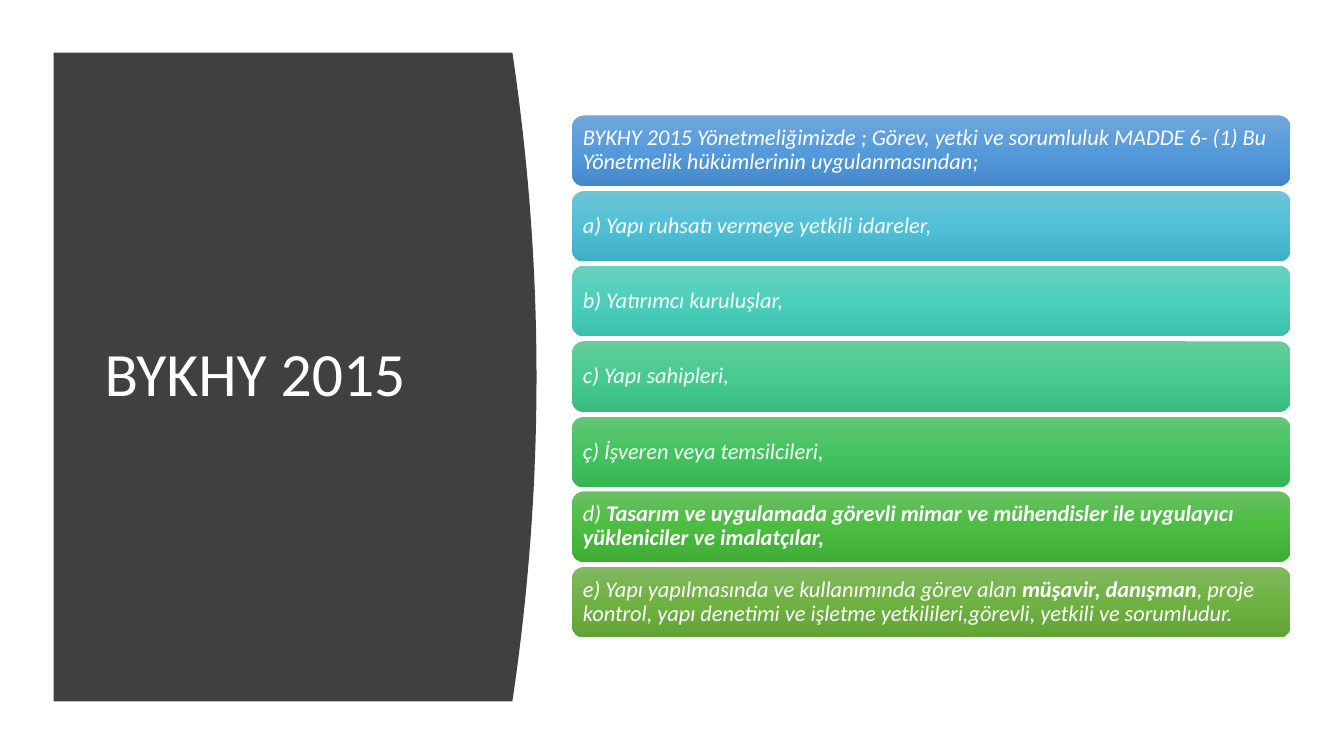
from copy import deepcopy
from dataclasses import dataclass

from pptx import Presentation
from pptx.dml.color import RGBColor
from pptx.enum.shapes import MSO_SHAPE
from pptx.enum.text import MSO_ANCHOR, MSO_AUTO_SIZE, PP_ALIGN
from pptx.oxml.ns import qn
from pptx.util import Pt

PX = 9525  # EMU in one px, 96 px to the inch


@dataclass(frozen=True)
class Theme:
    font: str = "Calibri"
    title_size: int = 44
    bar_size: int = 16
    text: str = "FFFFFF"
    panel: str = "404040"
    line_spacing: float = 0.9
    bar_gradients: tuple = (
        ("71A6DB", "559BDB", "448ACA"),
        ("6EC4D6", "50C0D6", "40AFC5"),
        ("6AD1C0", "4CD0BC", "3CC0AC"),
        ("67CC9A", "47CB8E", "39BB7F"),
        ("64C677", "44C460", "36B552"),
        ("69C062", "4CBD41", "3FAD34"),
        ("81B861", "6FB242", "62A336"),
    )


THEME = Theme()

# Each duty is a list of runs; every second run is bold.
DUTIES = (
    ["BYKHY 2015 Yönetmeliğimizde ; Görev, yetki ve sorumluluk MADDE 6- (1) "
     "Bu Yönetmelik hükümlerinin uygulanmasından;"],
    ["a) Yapı ruhsatı vermeye yetkili idareler,"],
    ["b) Yatırımcı kuruluşlar,"],
    ["c) Yapı sahipleri,"],
    ["ç) İşveren veya temsilcileri,"],
    ["d) ", "Tasarım ve uygulamada görevli mimar ve mühendisler ile uygulayıcı "
            "yükleniciler ve imalatçılar,"],
    ["e) Yapı yapılmasında ve kullanımında görev alan ", "müşavir, danışman",
     ", proje kontrol, yapı denetimi ve işletme yetkilileri,görevli, yetkili "
     "ve sorumludur."],
)


def place(shape, left, top, width, height):
    shape.left, shape.top = left * PX, top * PX
    shape.width, shape.height = width * PX, height * PX


def format_paragraph(paragraph, size):
    paragraph.alignment = PP_ALIGN.LEFT
    paragraph.line_spacing = THEME.line_spacing
    paragraph.font.name = THEME.font
    paragraph.font.size = Pt(size)
    paragraph.font.color.rgb = RGBColor.from_string(THEME.text)


def add_title_panel(slide, left, top, width, height):
    """Dark panel whose right edge bulges as a parabola, with the title on it."""
    bulge, steps = 23, 40
    edge = []
    for step in range(steps + 1):
        offset = 2 * step / steps - 1
        x = left + width - bulge * offset ** 2
        edge.append((round(x * PX), round((top + height * step / steps) * PX)))
    builder = slide.shapes.build_freeform(left * PX, top * PX)
    builder.add_line_segments(edge + [(left * PX, (top + height) * PX)], close=True)
    panel = builder.convert_to_shape()
    panel.shadow.inherit = False
    panel.fill.solid()
    panel.fill.fore_color.rgb = RGBColor.from_string(THEME.panel)
    panel.line.fill.background()

    title = slide.shapes.title
    title._element.addprevious(panel._element)  # keeps the title in front
    place(title, left + 39, top + 57, width - 101, height - 115)
    frame = title.text_frame
    frame.text = "BYKHY 2015"
    frame.word_wrap = True
    frame.auto_size = MSO_AUTO_SIZE.NONE
    frame.vertical_anchor = MSO_ANCHOR.MIDDLE
    format_paragraph(frame.paragraphs[0], THEME.title_size)


def fill_gradient(shape, colors):
    """Three evenly spaced colours from top to bottom."""
    shape.fill.gradient()
    shape.fill.gradient_angle = 270
    stop_list = shape._element.spPr.find(".//" + qn("a:gsLst"))
    stop_list.insert(1, deepcopy(stop_list[0]))
    for index, (stop, color) in enumerate(zip(shape.fill.gradient_stops, colors)):
        stop.position = index / 2
        stop.color.rgb = RGBColor.from_string(color)


def add_duty_bar(slide, runs, colors, left, top, width, height):
    bar = slide.shapes.add_shape(MSO_SHAPE.ROUNDED_RECTANGLE, 0, 0, 0, 0)
    place(bar, left, top, width, height)
    bar.shadow.inherit = False
    bar.line.fill.background()
    fill_gradient(bar, colors)
    frame = bar.text_frame
    frame.word_wrap = True
    frame.vertical_anchor = MSO_ANCHOR.MIDDLE
    frame.margin_left = frame.margin_right = 7 * PX
    frame.margin_top = frame.margin_bottom = 7 * PX
    paragraph = frame.paragraphs[0]
    format_paragraph(paragraph, THEME.bar_size)
    paragraph.font.italic = True
    for index, text in enumerate(runs):
        run = paragraph.add_run()
        run.text = text
        if index % 2:
            run.font.bold = True


def add_duty_list(slide, left, top, width, height):
    bar_height = 67
    pitch = (height - bar_height) / (len(DUTIES) - 1)
    for row, (runs, colors) in enumerate(zip(DUTIES, THEME.bar_gradients)):
        add_duty_bar(slide, runs, colors,
                     left, top + round(row * pitch), width, bar_height)


def main():
    presentation = Presentation()
    presentation.slide_width = 1280 * PX
    presentation.slide_height = 720 * PX
    slide = presentation.slides.add_slide(presentation.slide_layouts[5])
    add_title_panel(slide, 51, 50, 460, 618)
    add_duty_list(slide, 545, 110, 684, 497)
    presentation.save("out.pptx")


if __name__ == "__main__":
    main()
